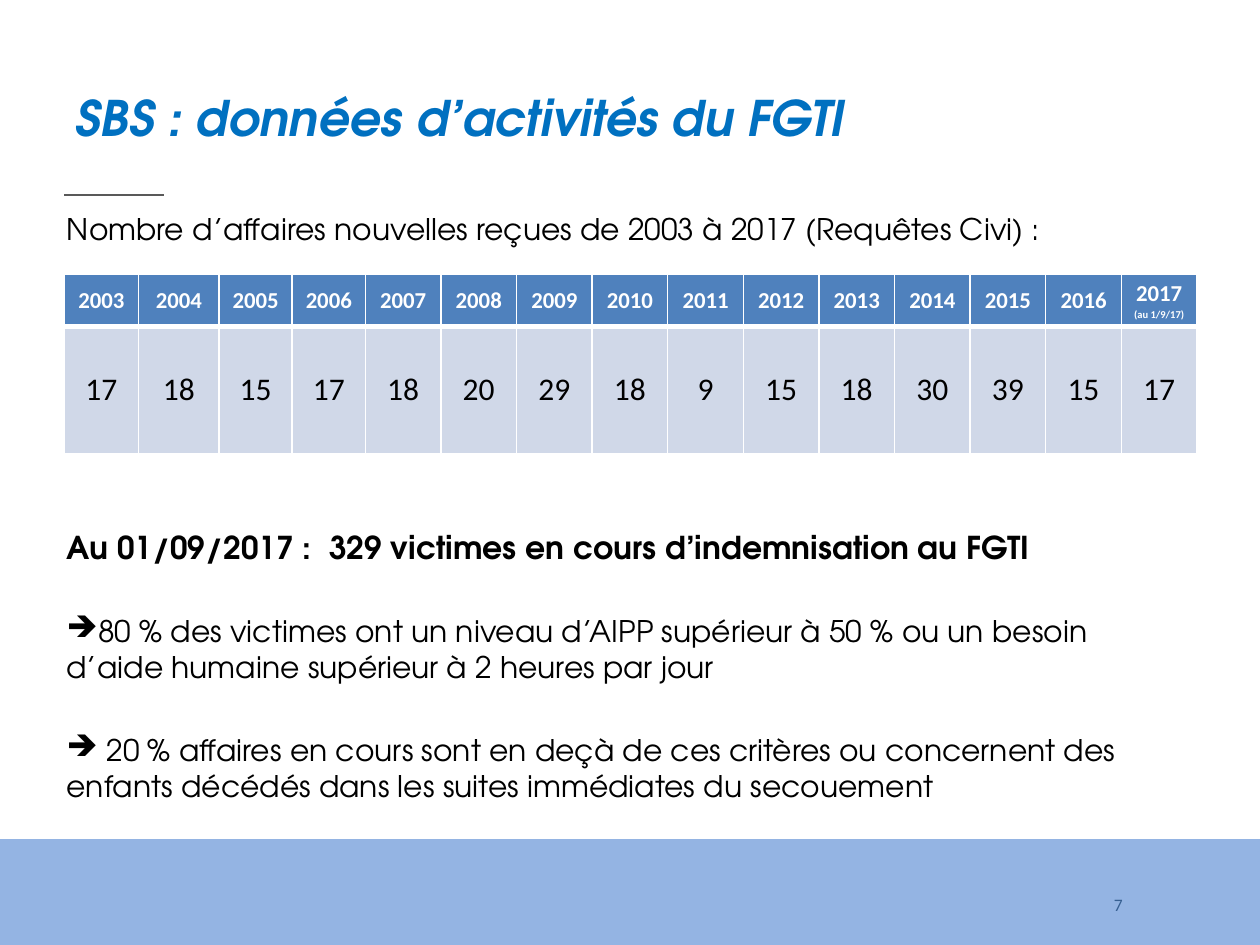
"""Build the slide on FGTI activity data."""
from dataclasses import dataclass

from lxml import etree
from pptx import Presentation
from pptx.dml.color import RGBColor
from pptx.enum import shapes, text
from pptx.oxml import ns
from pptx.util import Inches, Pt

SANS = "TeX Gyre Adventor"
CALIBRI = "Calibri"
LEFT, MID, RIGHT = text.PP_ALIGN.LEFT, text.PP_ALIGN.CENTER, text.PP_ALIGN.RIGHT
TOP, CENTRE = text.MSO_ANCHOR.TOP, text.MSO_ANCHOR.MIDDLE


@dataclass
class Style:
    size: float
    color: str = "000000"
    face: str = SANS
    bold: bool = False
    italic: bool = False


@dataclass
class Para:
    words: str
    style: Style
    align: text.PP_ALIGN = LEFT
    before: float = 0
    bullet: str = ""


@dataclass
class Count:
    year: str
    cases: int
    width: float = 0.6
    note: str = ""


PLAIN = Style(17)
HEAD = Style(13, "FFFFFF", CALIBRI, bold=True)
NOTE = Style(6, "FFFFFF", CALIBRI, bold=True)
VALUE = Style(18, face=CALIBRI)
COUNTS = [
    Count("2003", 17, 0.59), Count("2004", 18, 0.64),
    Count("2005", 15, 0.58), Count("2006", 17, 0.58),
    Count("2007", 18), Count("2008", 20), Count("2009", 29),
    Count("2010", 18), Count("2011", 9), Count("2012", 15),
    Count("2013", 18), Count("2014", 30), Count("2015", 39),
    Count("2016", 15), Count("2017 ", 17, note="(au 1/9/17)"),
]
FACTS = [
    Para("Au 01/09/2017 :  329 victimes en cours d’indemnisation au FGTI",
         Style(18, bold=True)),
    Para("80 % des victimes ont un niveau d’AIPP supérieur à 50 % ou un besoin "
         "d’aide humaine supérieur à 2 heures par jour",
         PLAIN, before=27, bullet="➔"),
    Para(" 20 % affaires en cours sont en deçà de ces critères ou concernent des "
         "enfants décédés dans les suites immédiates du secouement",
         PLAIN, before=27, bullet="➔"),
]


def paint(target, color: str) -> None:
    """Give a fill one solid colour."""
    target.solid()
    target.fore_color.rgb = RGBColor.from_string(color)


def dress(font, style: Style) -> None:
    """Apply a style to a font."""
    font.name, font.size = style.face, Pt(style.size)
    font.bold, font.italic = style.bold, style.italic
    paint(font.fill, style.color)


def write(frame, paras: list[Para], anchor=TOP) -> None:
    """Fill a text frame with styled paragraphs."""
    frame.word_wrap = True
    frame.auto_size = text.MSO_AUTO_SIZE.NONE
    frame.vertical_anchor = anchor
    for i, para in enumerate(paras):
        line = frame.paragraphs[0] if i == 0 else frame.add_paragraph()
        line.text = para.words
        line.alignment = para.align
        line.space_before = Pt(para.before)
        props = line._p.get_or_add_pPr()
        props.set("marL", "0")
        props.set("indent", "0")
        if para.bullet:
            mark = etree.SubElement(props, ns.qn("a:buChar"))
            mark.set("char", para.bullet)
        else:
            etree.SubElement(props, ns.qn("a:buNone"))
        for run in line.runs:
            dress(run.font, para.style)


def place(shape, left: float, top: float, width: float, height: float) -> None:
    """Move and size a shape."""
    shape.left, shape.top = Inches(left), Inches(top)
    shape.width, shape.height = Inches(width), Inches(height)


def edge(cell, side: str, width: float) -> None:
    """Draw one white cell border."""
    line = etree.SubElement(cell._tc.get_or_add_tcPr(), ns.qn(f"a:{side}"))
    line.set("w", str(Pt(width)))
    fill = etree.SubElement(line, ns.qn("a:solidFill"))
    etree.SubElement(fill, ns.qn("a:srgbClr")).set("val", "FFFFFF")


def fill_cell(cell, words: str, style: Style, color: str, top: float, base: float):
    """Write, border and fill one table cell, and return its paragraph."""
    cell.margin_left = cell.margin_right = Inches(0.08)
    cell.margin_top = cell.margin_bottom = Inches(0.03)
    cell.vertical_anchor = CENTRE
    line = cell.text_frame.paragraphs[0]
    line.text, line.alignment = words, MID
    dress(line.runs[0].font, style)
    for side, width in (("lnL", 1), ("lnR", 1), ("lnT", top), ("lnB", base)):
        edge(cell, side, width)
    paint(cell.fill, color)
    return line


def add_counts(slide, counts: list[Count]) -> None:
    """Add the table of new cases by year."""
    total = sum(c.width for c in counts)
    table = slide.shapes.add_table(2, len(counts), Inches(0.51), Inches(2.18),
                                   Inches(total), Inches(1.42)).table
    table.rows[0].height, table.rows[1].height = Inches(0.41), Inches(1.01)
    for i, count in enumerate(counts):
        table.columns[i].width = Inches(count.width)
        line = fill_cell(table.cell(0, i), count.year, HEAD, "4F81BD", 1, 3)
        if count.note:
            run = line.add_run()
            run.text = count.note
            dress(run.font, NOTE)
        fill_cell(table.cell(1, i), str(count.cases), VALUE, "D0D8E8", 3, 1)


def add_decor(slide) -> None:
    """Add the bottom band and the short rule."""
    band = slide.shapes.add_shape(shapes.MSO_SHAPE.RECTANGLE, 0, Inches(6.66),
                                  Inches(10), Inches(0.84))
    band.shadow.inherit = False
    paint(band.fill, "94B4E3")
    band.line.fill.background()
    rule = slide.shapes.add_connector(shapes.MSO_CONNECTOR.STRAIGHT, Inches(0.51),
                                      Inches(1.55), Inches(1.3), Inches(1.55))
    paint(rule.line.fill, "595959")
    rule.line.width = Pt(1)
    etree.SubElement(rule._element.spPr, ns.qn("a:effectLst"))


def main() -> None:
    """Build and save the deck."""
    deck = Presentation()
    deck.slide_width, deck.slide_height = Inches(10), Inches(7.5)
    slide = deck.slides.add_slide(deck.slide_layouts[1])
    add_decor(slide)

    title, body = slide.shapes.title, slide.placeholders[1]
    place(title, 0.5, 0.3, 9, 1.25)
    write(title.text_frame, [Para("SBS : données d’activités du FGTI",
          Style(28, "0070C0", bold=True, italic=True))], CENTRE)
    place(body, 0.43, 1.62, 9.16, 2.44)
    write(body.text_frame, [Para("Nombre d’affaires nouvelles reçues de 2003 à 2017 "
                                 "(Requêtes Civi) :", PLAIN)])

    add_counts(slide, COUNTS)
    facts = slide.shapes.add_textbox(0, 0, 0, 0)
    place(facts, 0.43, 4.14, 9, 4.87)
    write(facts.text_frame, FACTS)
    page = slide.shapes.add_textbox(0, 0, 0, 0)
    place(page, 6.68, 6.98, 2.33, 0.4)
    write(page.text_frame, [Para("7", Style(10, "376092", CALIBRI), RIGHT)], CENTRE)
    deck.save("out.pptx")


if __name__ == "__main__":
    main()
